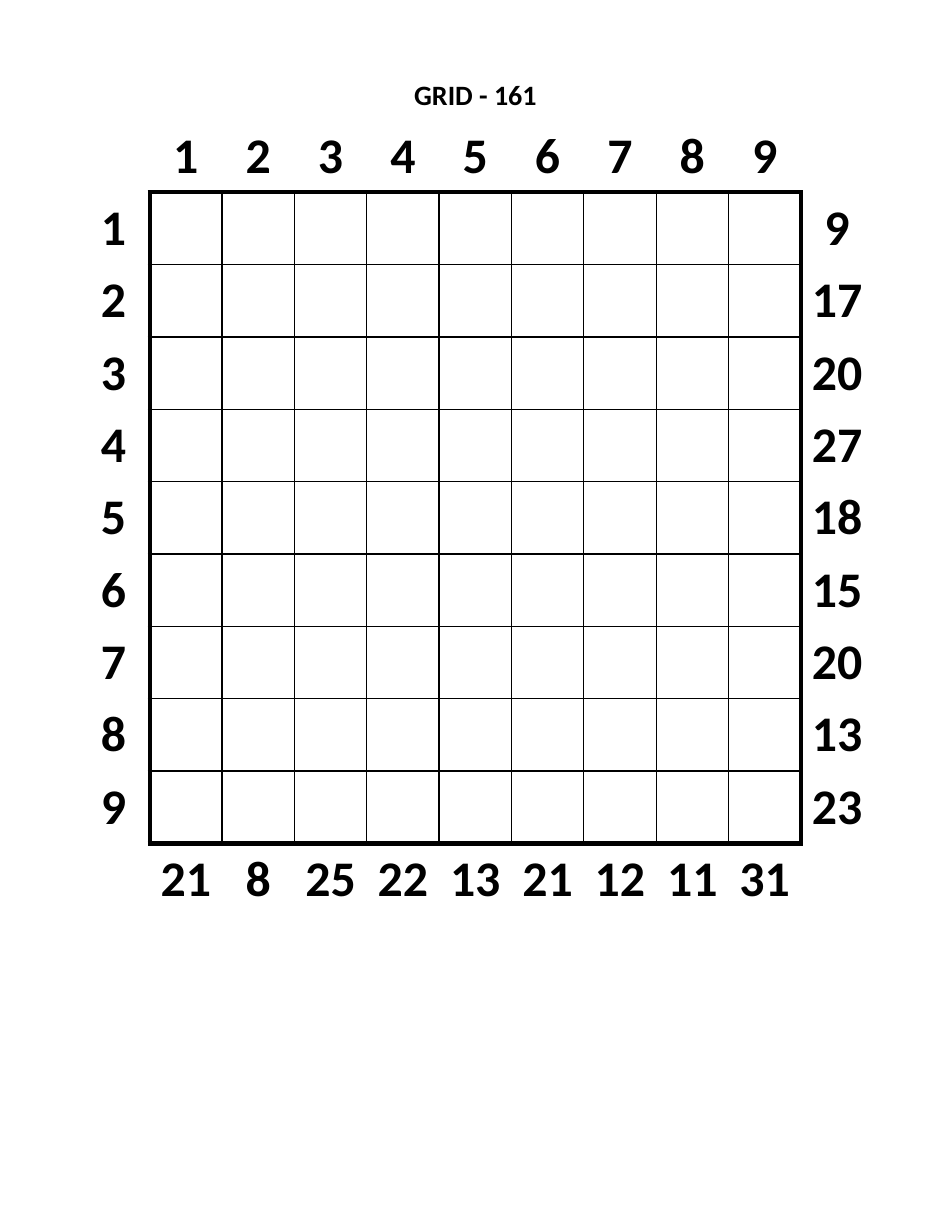
from dataclasses import dataclass

from lxml.etree import SubElement
from pptx import Presentation
from pptx.dml.color import RGBColor
from pptx.enum.text import MSO_ANCHOR as Anchor, PP_ALIGN as Align
from pptx.oxml.ns import qn
from pptx.util import Inches, Pt


@dataclass(frozen=True)
class Theme:
    font: str = "Calibri"
    ink: str = "000000"
    paper: str = "FFFFFF"
    title_size: int = 18
    number_size: int = 32
    thin: int = 1
    thick: int = 3


class PuzzlePage:
    """Draws the elements of a number puzzle on one slide."""

    SIDES = {"a:lnL": (0, -1), "a:lnR": (0, 1), "a:lnT": (-1, 0), "a:lnB": (1, 0)}

    def __init__(self, slide, theme):
        self.slide = slide
        self.theme = theme

    def add_text(self, frame, text, size):
        paragraph = frame.paragraphs[0]
        paragraph.alignment = Align.CENTER
        run = paragraph.add_run()
        run.text = text
        run.font.name = self.theme.font
        run.font.size = Pt(size)
        run.font.bold = True
        run.font.color.rgb = RGBColor.from_string(self.theme.ink)

    def clear_margins(self, holder):
        holder.margin_left = holder.margin_right = 0
        holder.margin_top = holder.margin_bottom = 0

    def title(self, text, left, top, width, height):
        box = self.slide.shapes.add_textbox(
            Inches(left), Inches(top), Inches(width), Inches(height))
        frame = box.text_frame
        frame.word_wrap = True
        self.clear_margins(frame)
        self.add_text(frame, text, self.theme.title_size)

    def border(self, cell, side, weight):
        properties = cell._tc.get_or_add_tcPr()
        line = SubElement(properties, qn(side), w=str(Pt(weight)))
        if weight:
            fill = SubElement(line, qn("a:solidFill"))
            SubElement(fill, qn("a:srgbClr"), val=self.theme.ink)
        else:
            SubElement(line, qn("a:noFill"))

    def grid(self, top_labels, left_labels, right_sums, bottom_sums, left, top, width):
        rows, columns = len(left_labels) + 2, len(top_labels) + 2
        pitch = width / columns
        table = self.slide.shapes.add_table(
            rows, columns, Inches(left), Inches(top),
            Inches(width), Inches(pitch * rows)).table
        table.first_row = table.horz_banding = False
        for band in table.columns:
            band.width = Inches(pitch)
        for band in table.rows:
            band.height = Inches(pitch)

        def inside(row, column):
            return 0 < row < rows - 1 and 0 < column < columns - 1

        weights = (0, self.theme.thick, self.theme.thin)
        for row in range(rows):
            for column in range(columns):
                cell = table.cell(row, column)
                for side, (down, right) in self.SIDES.items():
                    inner_count = inside(row, column) + inside(row + down, column + right)
                    self.border(cell, side, weights[inner_count])
                cell.fill.solid()
                cell.fill.fore_color.rgb = RGBColor.from_string(self.theme.paper)

        edges = {(0, i): n for i, n in enumerate(top_labels, 1)}
        edges |= {(rows - 1, i): n for i, n in enumerate(bottom_sums, 1)}
        edges |= {(i, 0): n for i, n in enumerate(left_labels, 1)}
        edges |= {(i, columns - 1): n for i, n in enumerate(right_sums, 1)}
        for position, number in edges.items():
            cell = table.cell(*position)
            cell.vertical_anchor = Anchor.MIDDLE
            self.clear_margins(cell)
            self.add_text(cell.text_frame, str(number), self.theme.number_size)


def main():
    presentation = Presentation()
    presentation.slide_width, presentation.slide_height = Inches(8.5), Inches(11)
    slide = presentation.slides.add_slide(presentation.slide_layouts[6])
    page = PuzzlePage(slide, Theme())
    left, width = 0.69, 7.11
    page.title("GRID - 161", left, 0.69, width, 0.3)
    page.grid(
        top_labels=range(1, 10),
        left_labels=range(1, 10),
        right_sums=[9, 17, 20, 27, 18, 15, 20, 13, 23],
        bottom_sums=[21, 8, 25, 22, 13, 21, 12, 11, 31],
        left=left, top=1.07, width=width)
    presentation.save("out.pptx")


if __name__ == "__main__":
    main()
